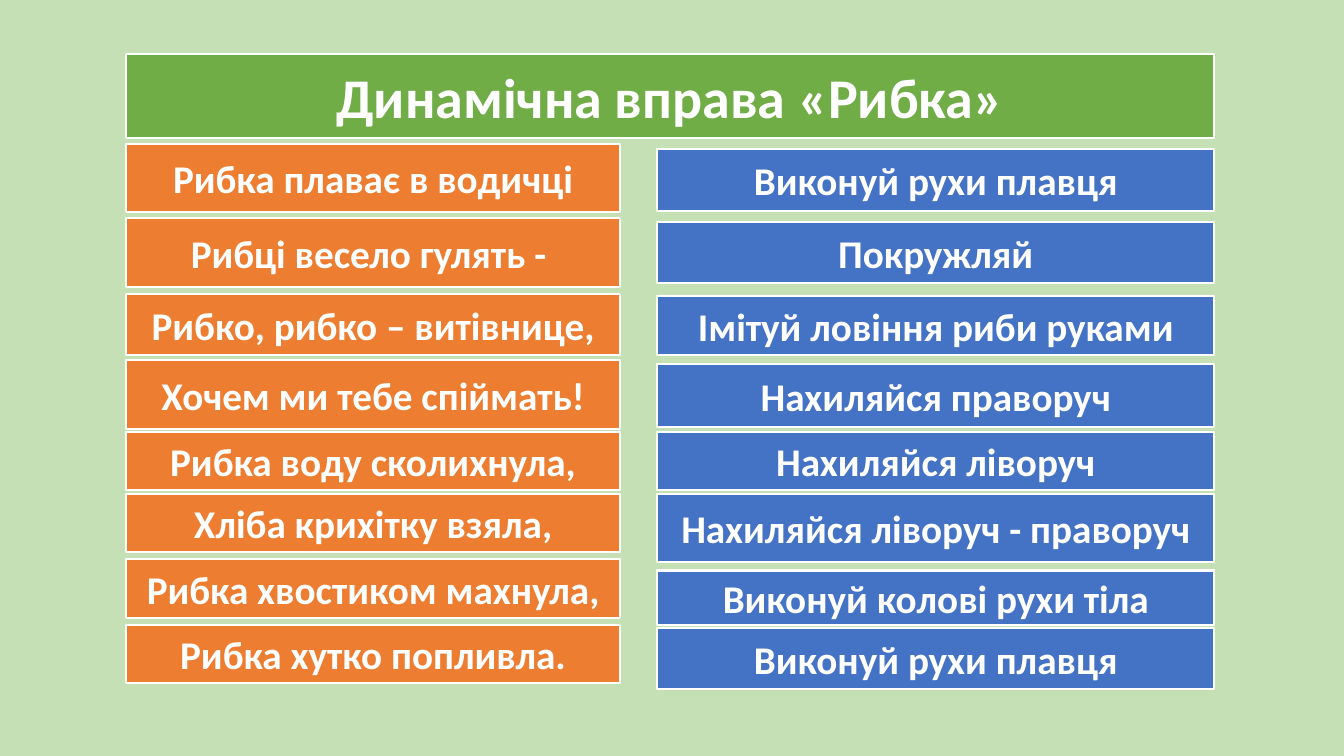
from pptx import Presentation
from pptx.dml.color import RGBColor
from pptx.enum.shapes import MSO_SHAPE
from pptx.enum.text import MSO_ANCHOR, MSO_AUTO_SIZE, PP_ALIGN
from pptx.util import Inches, Pt

COLORS = {
    "background": "C5E0B4",
    "title": "70AD47",
    "verse": "ED7D31",
    "movement": "4472C4",
    "white": "FFFFFF",
}

TITLE = "Динамічна вправа «Рибка»"
LEFT, RIGHT = 1.25, 12.04
VERSE_WIDTH, MOVEMENT_WIDTH = 4.9, 5.52

# Each line: text, top, height
VERSES = [
    ("Рибка плаває в водичці", 1.43, 0.67),
    ("Рибці весело гулять - ", 2.16, 0.69),
    ("Рибко, рибко – витівнице,", 2.92, 0.6),
    ("Хочем ми тебе спіймать!", 3.57, 0.69),
    ("Рибка воду сколихнула,", 4.29, 0.57),
    ("Хліба крихітку взяла,", 4.9, 0.58),
    ("Рибка хвостиком махнула,", 5.55, 0.58),
    ("Рибка хутко попливла.", 6.2, 0.58),
]
MOVEMENTS = [
    ("Виконуй рухи плавця", 1.48, 0.61),
    ("Покружляй", 2.2, 0.61),
    ("Імітуй ловіння риби руками", 2.94, 0.58),
    ("Нахиляйся праворуч", 3.61, 0.63),
    ("Нахиляйся ліворуч", 4.29, 0.57),
    ("Нахиляйся ліворуч - праворуч", 4.9, 0.68),
    ("Виконуй колові рухи тіла", 5.66, 0.54),
    ("Виконуй рухи плавця", 6.23, 0.61),
]


def rgb(name):
    return RGBColor.from_string(COLORS[name])


def style_plate(plate, text, color, size):
    """Fill and outline a plate and set its bold, centred white text."""
    plate.fill.solid()
    plate.fill.fore_color.rgb = rgb(color)
    plate.line.color.rgb = rgb("white")
    plate.line.width = Pt(1.5)
    frame = plate.text_frame
    frame.word_wrap = True
    frame.auto_size = MSO_AUTO_SIZE.NONE
    frame.vertical_anchor = MSO_ANCHOR.MIDDLE
    frame.text = text
    paragraph = frame.paragraphs[0]
    paragraph.alignment = PP_ALIGN.CENTER
    font = paragraph.runs[0].font
    font.name = "Calibri"
    font.size = Pt(size)
    font.bold = True
    font.color.rgb = rgb("white")


def place_title(slide):
    title = slide.shapes.title
    title.left, title.top = Inches(LEFT), Inches(0.54)
    title.width, title.height = Inches(RIGHT - LEFT), Inches(0.83)
    style_plate(title, TITLE, "title", 40)


def add_column(slide, lines, left, width, color):
    for text, top, height in lines:
        plate = slide.shapes.add_shape(
            MSO_SHAPE.RECTANGLE,
            Inches(left), Inches(top), Inches(width), Inches(height))
        plate.shadow.inherit = False
        style_plate(plate, text, color, 28)


def main():
    prs = Presentation()
    prs.slide_width, prs.slide_height = Inches(13.33), Inches(7.5)
    slide = prs.slides.add_slide(prs.slide_layouts.get_by_name("Title Only"))
    slide.background.fill.solid()
    slide.background.fill.fore_color.rgb = rgb("background")
    place_title(slide)
    add_column(slide, VERSES, LEFT, VERSE_WIDTH, "verse")
    add_column(slide, MOVEMENTS, RIGHT - MOVEMENT_WIDTH, MOVEMENT_WIDTH,
               "movement")
    prs.save("out.pptx")


if __name__ == "__main__":
    main()
